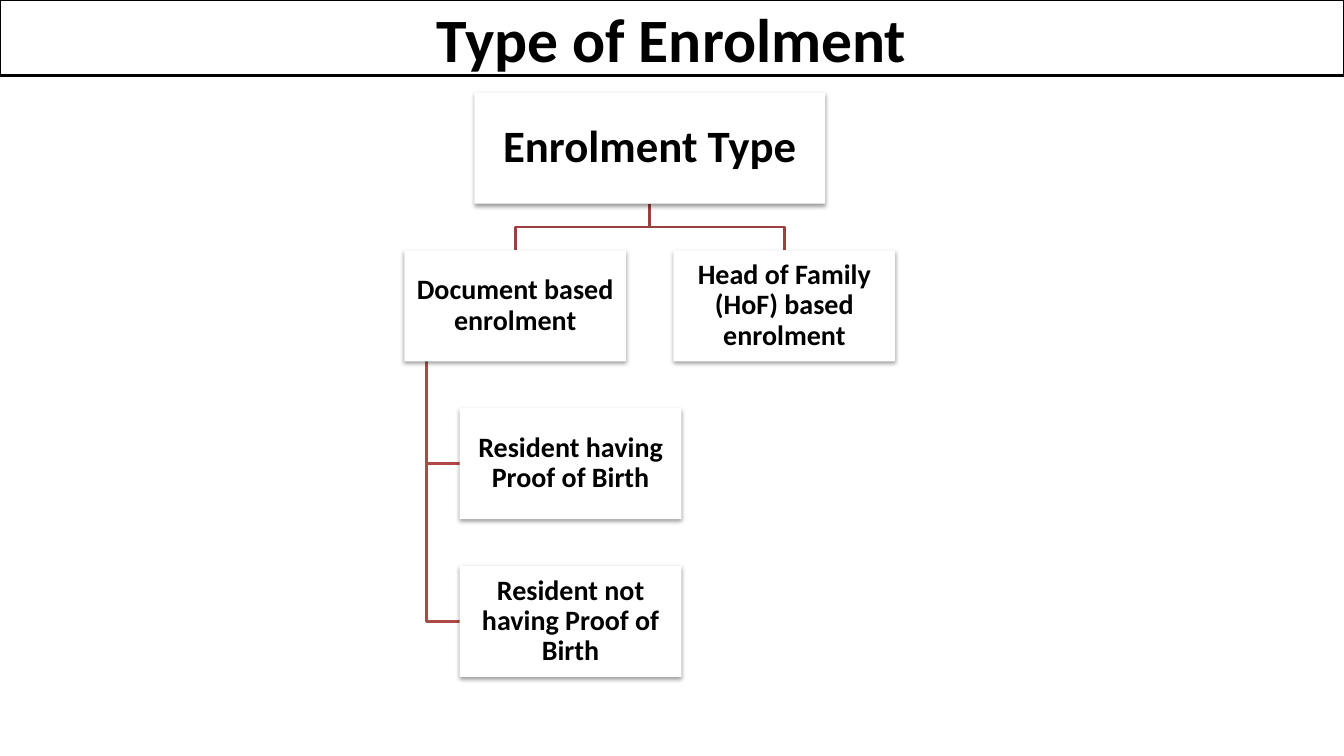
from dataclasses import dataclass

from lxml import etree
from pptx import Presentation
from pptx.dml.color import RGBColor
from pptx.enum.shapes import MSO_CONNECTOR, MSO_SHAPE
from pptx.enum.text import MSO_ANCHOR, MSO_AUTO_SIZE, PP_ALIGN
from pptx.oxml.ns import qn
from pptx.shapes.autoshape import Shape
from pptx.slide import Slide
from pptx.text.text import TextFrame
from pptx.util import Inches, Pt

RECTANGLE = MSO_SHAPE.RECTANGLE
STRAIGHT = MSO_CONNECTOR.STRAIGHT
MIDDLE = MSO_ANCHOR.MIDDLE
CENTER = PP_ALIGN.CENTER
NO_AUTOFIT = MSO_AUTO_SIZE.NONE

BLACK = RGBColor(0x00, 0x00, 0x00)
WHITE = RGBColor(0xFF, 0xFF, 0xFF)
BRANCH_RED = RGBColor(0x9A, 0x40, 0x3E)
LEAF_RED = RGBColor(0xAE, 0x49, 0x46)

SLIDE_WIDTH, SLIDE_HEIGHT = 13.33, 7.5
TITLE_HEIGHT = SLIDE_HEIGHT / 10

# Chart grid, in inches
CHART_LEFT, CHART_TOP = 4.01, 0.92
COLUMN_PITCH, ROW_PITCH = 2.67, 1.565
BOX_WIDTH, BOX_HEIGHT = 2.2, 1.1
LEAF_INDENT = BOX_WIDTH / 4
TRUNK_INDENT = BOX_WIDTH / 10

Point = tuple[float, float]


@dataclass(frozen=True)
class Node:
    label: str
    column: float
    row: int
    indent: float = 0
    width: float = BOX_WIDTH
    size: int = 20
    inset: float = 0.01

    @property
    def center(self) -> float:
        return CHART_LEFT + self.column * COLUMN_PITCH + self.indent + BOX_WIDTH / 2

    @property
    def left(self) -> float:
        return self.center - self.width / 2

    @property
    def top(self) -> float:
        return CHART_TOP + self.row * ROW_PITCH

    @property
    def bottom(self) -> float:
        return self.top + BOX_HEIGHT


ROOT = Node("Enrolment Type", 0.5, 0, width=3.48, size=32, inset=0.02)
DOCUMENT = Node("Document based enrolment", 0, 1)
FAMILY = Node("Head of Family (HoF) based enrolment", 1, 1)
LEAVES = [
    Node("Resident having Proof of Birth", 0, 2, LEAF_INDENT),
    Node("Resident not having Proof of Birth", 0, 3, LEAF_INDENT),
]


def write_text(frame: TextFrame, text: str, *, size: int, inset: float = 0.05,
               line_spacing: float = 1.0) -> None:
    frame.word_wrap = True
    frame.auto_size = NO_AUTOFIT
    frame.vertical_anchor = MIDDLE
    frame.margin_left = frame.margin_right = Inches(inset)
    frame.margin_top = frame.margin_bottom = Inches(inset)
    paragraph = frame.paragraphs[0]
    paragraph.alignment = CENTER
    paragraph.line_spacing = line_spacing
    run = paragraph.add_run()
    run.text = text
    run.font.name = "Calibri"
    run.font.size = Pt(size)
    run.font.bold = True
    run.font.color.rgb = BLACK


def add_soft_shadow(shape: Shape) -> None:
    shape.shadow.inherit = False
    effects = shape._element.spPr.find(qn("a:effectLst"))
    shadow = etree.SubElement(effects, qn("a:outerShdw"), blurRad=str(Pt(3.1)),
                              dist=str(Pt(1.6)), dir="5400000", rotWithShape="0")
    color = etree.SubElement(shadow, qn("a:srgbClr"), val=str(BLACK))
    etree.SubElement(color, qn("a:alpha"), val="38000")


def add_node(slide: Slide, node: Node) -> None:
    box = slide.shapes.add_shape(RECTANGLE, Inches(node.left), Inches(node.top),
                                 Inches(node.width), Inches(BOX_HEIGHT))
    box.fill.solid()
    box.fill.fore_color.rgb = WHITE
    box.line.fill.background()
    add_soft_shadow(box)
    write_text(box.text_frame, node.label, size=node.size, inset=node.inset,
               line_spacing=0.9)


def add_bent_line(slide: Slide, points: list[Point], color: RGBColor) -> None:
    start, *rest = [(Inches(x), Inches(y)) for x, y in points]
    builder = slide.shapes.build_freeform(*start)
    builder.add_line_segments(rest, close=False)
    line = builder.convert_to_shape()
    line.fill.background()
    line.line.color.rgb = color
    line.line.width = Pt(2)
    line.shadow.inherit = False


def add_branch(slide: Slide, parent: Node, child: Node) -> None:
    """Link the parent's bottom to the child's top, bending halfway."""
    bend = (parent.bottom + child.top) / 2
    add_bent_line(slide, [(parent.center, parent.bottom), (parent.center, bend),
                          (child.center, bend), (child.center, child.top)], BRANCH_RED)


def add_leaf_link(slide: Slide, parent: Node, leaf: Node) -> None:
    """Drop a trunk from the parent's left part, then turn into the leaf's side."""
    trunk = parent.left + TRUNK_INDENT
    middle = leaf.top + BOX_HEIGHT / 2
    add_bent_line(slide, [(trunk, parent.bottom), (trunk, middle),
                          (leaf.left, middle)], LEAF_RED)


def add_title(slide: Slide) -> None:
    title = slide.shapes.title
    title.left = title.top = 0
    title.width, title.height = Inches(SLIDE_WIDTH), Inches(TITLE_HEIGHT)
    title.line.color.rgb = BLACK
    title.line.width = Pt(0.75)
    write_text(title.text_frame, "Type of Enrolment", size=44)

    rule = slide.shapes.add_connector(STRAIGHT, 0, Inches(TITLE_HEIGHT),
                                      Inches(SLIDE_WIDTH), Inches(TITLE_HEIGHT))
    rule.line.color.rgb = BLACK
    rule.line.width = Pt(2)
    etree.SubElement(rule._element.spPr, qn("a:effectLst"))


def main() -> None:
    presentation = Presentation()
    presentation.slide_width = Inches(SLIDE_WIDTH)
    presentation.slide_height = Inches(SLIDE_HEIGHT)
    slide = presentation.slides.add_slide(presentation.slide_layouts[5])
    add_title(slide)
    for child in (FAMILY, DOCUMENT):
        add_branch(slide, ROOT, child)
    for leaf in LEAVES:
        add_leaf_link(slide, DOCUMENT, leaf)
    for node in (ROOT, DOCUMENT, *LEAVES, FAMILY):
        add_node(slide, node)
    presentation.save("out.pptx")


if __name__ == "__main__":
    main()
